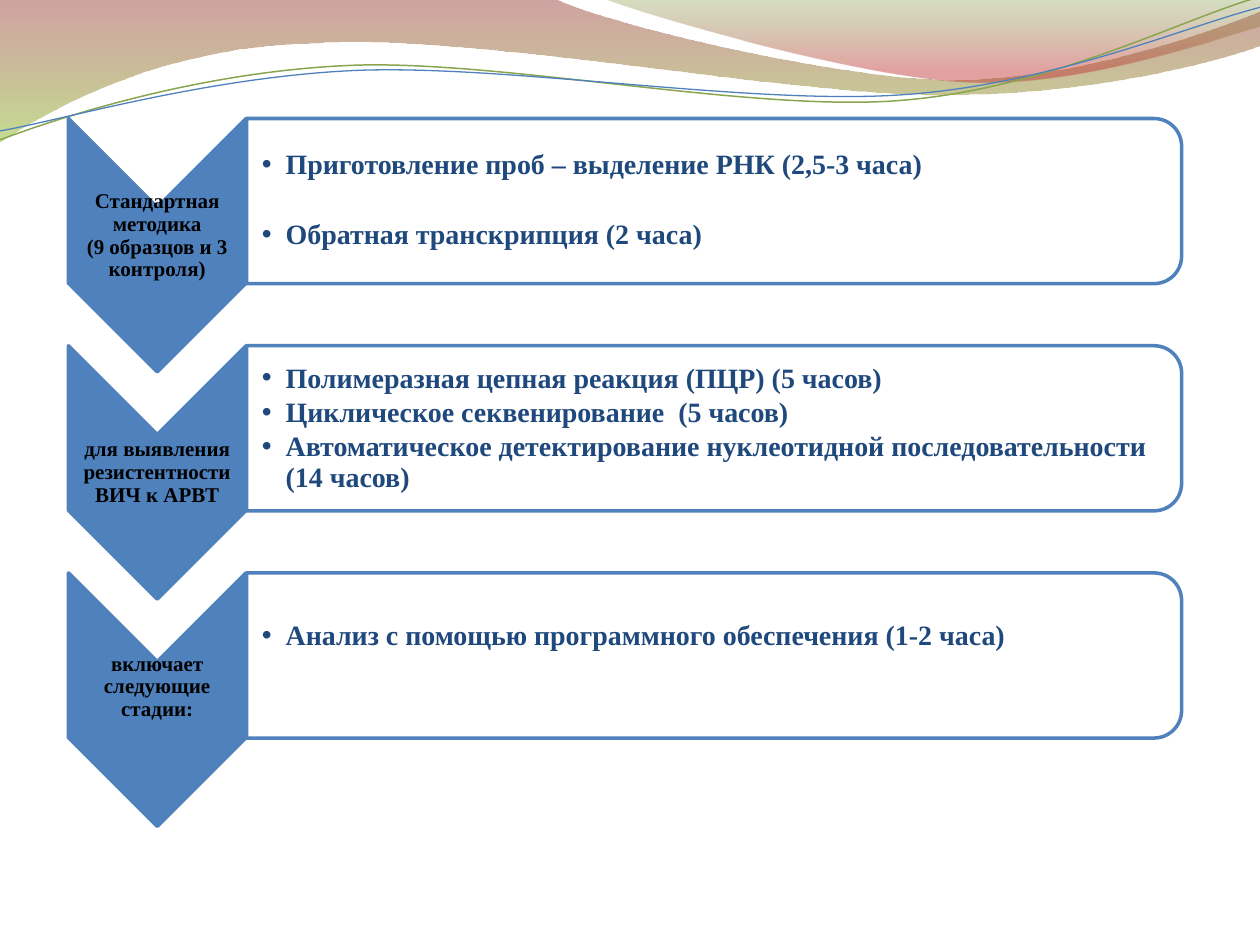
from dataclasses import dataclass

from lxml import etree
from pptx import Presentation
from pptx.dml.color import RGBColor
from pptx.enum.shapes import MSO_SHAPE
from pptx.enum.text import MSO_ANCHOR, PP_ALIGN
from pptx.oxml.ns import qn
from pptx.util import Cm, Pt

CHEVRON = MSO_SHAPE.CHEVRON
PANEL = MSO_SHAPE.ROUND_2_SAME_RECTANGLE
MIDDLE = MSO_ANCHOR.MIDDLE
LEFT, CENTER = PP_ALIGN.LEFT, PP_ALIGN.CENTER


@dataclass(frozen=True)
class Theme:
    font: str = "Times New Roman"
    dot: str = "Arial"
    blue: str = "4F81BD"
    green: str = "89A54F"
    navy: str = "1F497D"
    black: str = "000000"
    white: str = "FFFFFF"
    label: int = 12
    body: int = 16
    # Gradient stops: position, colour, opacity in percent
    band: tuple = ((0, "973330", 45), (100, "95C238", 55))
    veil: tuple = ((0, "769537", 30), (80, "BE3330", 45))


THEME = Theme()

# Outlines in cm: a pair is a line's end, six numbers are a Bezier curve.
BAND = [(0, 0), (11.18, -0.03),
        (12.09, 0.43, 16.87, 1.6, 19.25, 1.6),
        (21.67, 1.6, 24.33, 0.66, 25.4, 0.23), (25.42, 0.91),
        (24.97, 1.12, 22.1, 1.93, 18.95, 1.91),
        (15.8, 1.91, 9.7, 0.71, 6.53, 0.86),
        (3.28, 0.91, 1.17, 2.11, -0.03, 2.87), (0, 0)]
VEIL = [(12.17, -0.03),
        (12.93, 0.28, 17.32, 1.57, 19.53, 1.65),
        (21.74, 1.75, 24.41, 0.81, 25.4, 0.53), (25.4, 0), (12.17, -0.03)]
GREEN = [(0, 2.82),
         (1.22, 2.36, 4.01, 1.45, 7.04, 1.32),
         (10.03, 1.19, 15.06, 2.26, 18.11, 2.03),
         (21.16, 1.8, 23.83, 0.38, 25.35, -0.05)]
BLUE = [(0, 2.64),
        (1.19, 2.44, 4.17, 1.55, 7.19, 1.42),
        (10.24, 1.3, 15.16, 2.13, 18.21, 1.91),
        (21.23, 1.7, 23.9, 0.53, 25.4, 0.15)]

# Label, its lift in cm, notes, their lift in cm, space after a note in pt
ROWS = [
    ("Стандартная методика\v(9 образцов и 3 контроля)", 0.19,
     ["Приготовление проб – выделение РНК (2,5-3 часа)",
      "Обратная транскрипция (2 часа)"], 0.02, 22.5),
    ("для выявления резистентности ВИЧ к АРВТ", 0,
     ["Полимеразная цепная реакция (ПЦР) (5 часов)",
      "Циклическое секвенирование  (5 часов)",
      "Автоматическое детектирование нуклеотидной последовательности "
      "(14 часов)"], 0, 2.4),
    ("включает следующие стадии:", 0.26,
     ["Анализ с помощью программного обеспечения (1-2 часа)"], 0.38, 2.4),
]
TOP, PITCH = 2.39, 4.58


def rgb(code):
    return RGBColor.from_string(code)


def fade(shape, *levels):
    """Set the opacity of the fill's colours, in order."""
    for color, level in zip(shape._element.spPr.iter(qn("a:srgbClr")), levels):
        etree.SubElement(color, qn("a:alpha"), val=str(level * 1000))


def bend(shape, steps):
    """Join each curve's three segments into one Bezier segment."""
    parts = list(shape._element.iter(qn("a:lnTo")))
    for step in steps[1:]:
        size = len(step) // 2
        used, parts = parts[:size], parts[size:]
        if size == 3:
            curve = etree.Element(qn("a:cubicBezTo"))
            used[0].addprevious(curve)
            for part in used:
                curve.append(part[0])
                part.getparent().remove(part)


def add_path(slide, steps, close):
    first, *rest = [(Cm(x), Cm(y)) for step in steps
                    for x, y in zip(step[::2], step[1::2])]
    pen = slide.shapes.build_freeform(*first)
    pen.add_line_segments(rest, close=close)
    shape = pen.convert_to_shape()
    bend(shape, steps)
    shape.shadow.inherit = False
    return shape


def add_wave(slide, steps, stops):
    shape = add_path(slide, steps, True)
    shape.fill.gradient()
    shape.fill.gradient_angle = 270
    for stop, (place, code, _) in zip(shape.fill.gradient_stops, stops):
        stop.position = place / 100
        stop.color.rgb = rgb(code)
    fade(shape, *(level for _, _, level in stops))
    shape.line.fill.background()


def add_curve(slide, steps, color, width):
    shape = add_path(slide, steps, False)
    shape.fill.background()
    shape.line.color.rgb = rgb(color)
    shape.line.width = Pt(width)


def add_turned(slide, kind, x, y, wide, high, fill):
    """Add a shape turned by 90 degrees that covers the given box."""
    shift = (wide - high) / 2
    shape = slide.shapes.add_shape(kind, Cm(x + shift), Cm(y - shift),
                                   Cm(high), Cm(wide))
    shape.rotation = 90
    shape.shadow.inherit = False
    shape.fill.solid()
    shape.fill.fore_color.rgb = rgb(fill)
    shape.line.color.rgb = rgb(THEME.blue)
    shape.line.width = Pt(2)
    return shape


def add_text(slide, lines, x, y, wide, high, *, size, color, align=LEFT,
             inset=0.03, after=0, bullet=False):
    box = slide.shapes.add_textbox(Cm(x), Cm(y), Cm(wide), Cm(high))
    frame = box.text_frame
    frame.word_wrap = True
    frame.vertical_anchor = MIDDLE
    frame.margin_left = Cm(inset)
    frame.margin_right = frame.margin_top = frame.margin_bottom = Cm(0.03)
    for i, line in enumerate(lines):
        para = frame.paragraphs[0] if i == 0 else frame.add_paragraph()
        para.text = line
        para.alignment = align
        para.line_spacing = 0.9
        para.space_after = Pt(after)
        for run in para.runs:
            run.font.name = THEME.font
            run.font.size = Pt(size)
            run.font.bold = True
            run.font.color.rgb = rgb(color)
        if bullet:
            props = para._p.get_or_add_pPr()
            props.set("marL", str(Cm(0.48)))
            props.set("indent", str(-Cm(0.48)))
            etree.SubElement(props, qn("a:buFont"), typeface=THEME.dot)
            etree.SubElement(props, qn("a:buChar"), char="•")


def add_row(slide, y, label, rise, notes, lift, after):
    add_turned(slide, CHEVRON, 1.38, y, 3.58, 5.11, THEME.blue)
    add_text(slide, [label], 1.38, y + 1.8 - rise, 3.58, 1.52,
             size=THEME.label, color=THEME.black, align=CENTER)
    panel = add_turned(slide, PANEL, 4.97, y, 18.85, 3.33, THEME.white)
    fade(panel, 90)
    add_text(slide, notes, 4.97, y + 0.17 - lift, 18.7, 3, size=THEME.body,
             color=THEME.navy, inset=0.31, after=after, bullet=True)


def main():
    deck = Presentation()
    deck.slide_width, deck.slide_height = Cm(25.4), Cm(19.05)
    slide = deck.slides.add_slide(deck.slide_layouts[6])
    add_wave(slide, BAND, THEME.band)
    add_wave(slide, VEIL, THEME.veil)
    add_curve(slide, GREEN, THEME.green, 0.85)
    add_curve(slide, BLUE, THEME.blue, 0.75)
    for i, row in enumerate(ROWS):
        add_row(slide, TOP + i * PITCH, *row)
    deck.save("out.pptx")


if __name__ == "__main__":
    main()
